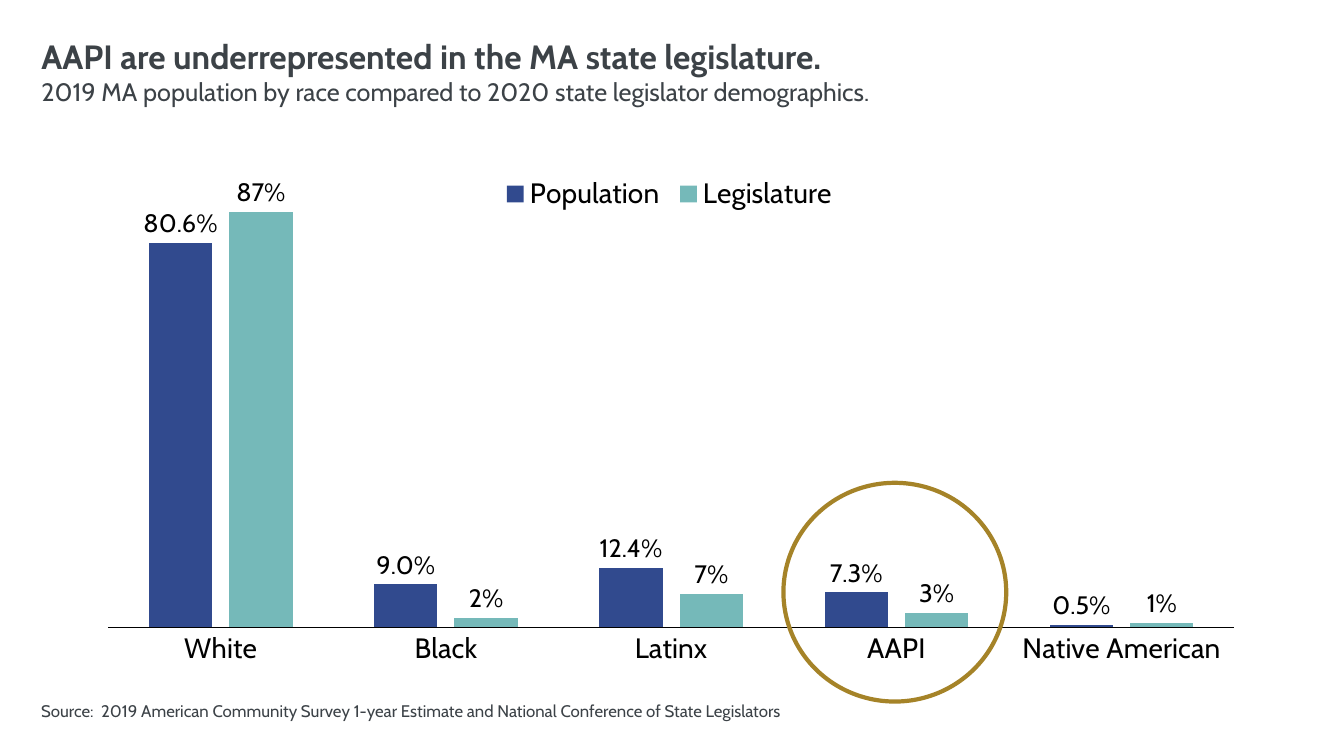
from lxml.etree import SubElement
from pptx import Presentation
from pptx.chart.data import CategoryChartData
from pptx.dml.color import RGBColor
from pptx.enum.chart import XL_CHART_TYPE, XL_LABEL_POSITION, XL_LEGEND_POSITION, XL_TICK_MARK
from pptx.enum.shapes import MSO_SHAPE
from pptx.enum.text import MSO_ANCHOR, MSO_AUTO_SIZE, PP_ALIGN
from pptx.oxml.ns import qn
from pptx.util import Inches, Pt

FONT = "Cabin"
COLORS = {
    "text": "3C4247",
    "chart_text": "000000",
    "population": "314A8E",
    "legislature": "75B9B9",
    "highlight": "A58328",
}
CATEGORIES = ["White", "Black", "Latinx", "AAPI", "Native American"]
# name, values, number format, color
SERIES = [
    ("Population", [0.806, 0.09, 0.124, 0.073, 0.005], "0.0%", "population"),
    ("Legislature", [0.87, 0.02, 0.07, 0.03, 0.01], "0%", "legislature"),
]


def rgb(name):
    return RGBColor.from_string(COLORS[name])


def style_font(font, size, color, bold=False):
    font.name = FONT
    font.size = Pt(size)
    font.bold = bold
    font.color.rgb = rgb(color)


def add_run(paragraph, text, size, bold=False):
    run = paragraph.add_run()
    run.text = text
    style_font(run.font, size, "text", bold)


def place(shape, box):
    shape.left, shape.top, shape.width, shape.height = [Inches(value) for value in box]


def set_manual_layout(element, fractions, target=None):
    """Fix a chart part at (x, y, w, h), given as fractions of the chart."""
    layout = element.find(qn("c:layout"))
    if layout is None:
        layout = SubElement(element, qn("c:layout"))
        # The schema wants the layout right after the legend position, or first.
        position = element.find(qn("c:legendPos"))
        element.insert(0 if position is None else element.index(position) + 1, layout)
    manual = SubElement(layout, qn("c:manualLayout"))
    settings = [("layoutTarget", target)] if target else []
    settings += [("xMode", "edge"), ("yMode", "edge")]
    settings += zip("xywh", map(str, fractions))
    for tag, value in settings:
        SubElement(manual, qn(f"c:{tag}")).set("val", value)


def add_heading(slide, box):
    title = slide.shapes.title
    place(title, box)
    frame = title.text_frame
    frame.word_wrap = True
    frame.auto_size = MSO_AUTO_SIZE.NONE
    frame.vertical_anchor = MSO_ANCHOR.MIDDLE
    paragraph = frame.paragraphs[0]
    paragraph.alignment = PP_ALIGN.LEFT
    paragraph.space_after = Pt(6)
    add_run(paragraph, "AAPI are underrepresented in the MA state legislature.", 24, bold=True)
    paragraph.add_line_break()
    add_run(paragraph, "2019 MA population by race compared to 2020 state legislator demographics.", 18)


def style_axes(chart):
    category_axis = chart.category_axis
    category_axis.major_tick_mark = XL_TICK_MARK.NONE
    category_axis.format.line.color.rgb = rgb("chart_text")
    category_axis.format.line.width = Pt(0.75)
    style_font(category_axis.tick_labels.font, 20, "chart_text")
    value_axis = chart.value_axis
    value_axis.minimum_scale = 0
    value_axis.maximum_scale = 1
    value_axis.has_major_gridlines = False
    value_axis.visible = False


def style_series(series, number_format, color):
    series.invert_if_negative = False
    series.format.fill.solid()
    series.format.fill.fore_color.rgb = rgb(color)
    labels = series.data_labels
    labels.show_value = True
    labels.position = XL_LABEL_POSITION.OUTSIDE_END
    labels.number_format = number_format
    labels.number_format_is_linked = False
    style_font(labels.font, 18, "chart_text")


def add_race_chart(slide, box):
    data = CategoryChartData()
    data.categories = CATEGORIES
    for name, values, number_format, _ in SERIES:
        data.add_series(name, values, number_format)
    frame = slide.shapes.add_chart(
        XL_CHART_TYPE.COLUMN_CLUSTERED, *[Inches(value) for value in box], data)
    chart = frame.chart
    chart.has_title = False
    style_font(chart.font, 10, "chart_text")
    style_axes(chart)

    plot = chart.plots[0]
    plot.vary_by_categories = False
    plot.gap_width = 129
    plot.overlap = -27
    for series, (_, _, number_format, color) in zip(plot.series, SERIES):
        style_series(series, number_format, color)

    chart.has_legend = True
    legend = chart.legend
    legend.position = XL_LEGEND_POSITION.TOP
    legend.include_in_layout = False
    style_font(legend.font, 20, "chart_text")
    plot_area = chart.element.find(f".//{qn('c:plotArea')}")
    set_manual_layout(plot_area, (0.015, 0.062, 0.973, 0.846), "inner")
    set_manual_layout(chart.element.find(f".//{qn('c:legend')}"), (0.35, 0.1, 0.3, 0.08))


def add_highlight_ring(slide, box):
    ring = slide.shapes.add_shape(MSO_SHAPE.OVAL, *[Inches(value) for value in box])
    ring.shadow.inherit = False
    ring.fill.background()
    ring.line.color.rgb = rgb("highlight")
    ring.line.width = Pt(3)


def add_source_note(slide, box):
    note = slide.shapes.add_textbox(*[Inches(value) for value in box])
    frame = note.text_frame
    frame.word_wrap = True
    frame.auto_size = MSO_AUTO_SIZE.SHAPE_TO_FIT_TEXT
    add_run(frame.paragraphs[0], "Source:  2019 American Community Survey 1-year Estimate "
            "and National Conference of State Legislators", 12)


def main():
    presentation = Presentation()
    presentation.slide_width = Inches(13.33)
    presentation.slide_height = Inches(7.5)
    slide = presentation.slides.add_slide(presentation.slide_layouts.get_by_name("Title Only"))
    add_heading(slide, (0.31, 0.27, 12.07, 0.87))
    add_race_chart(slide, (0.9, 1.14, 11.48, 5.6))
    add_highlight_ring(slide, (7.77, 4.79, 2.21, 2.17))
    add_source_note(slide, (0.31, 6.9, 8.86, 0.3))
    presentation.save("out.pptx")


if __name__ == "__main__":
    main()
